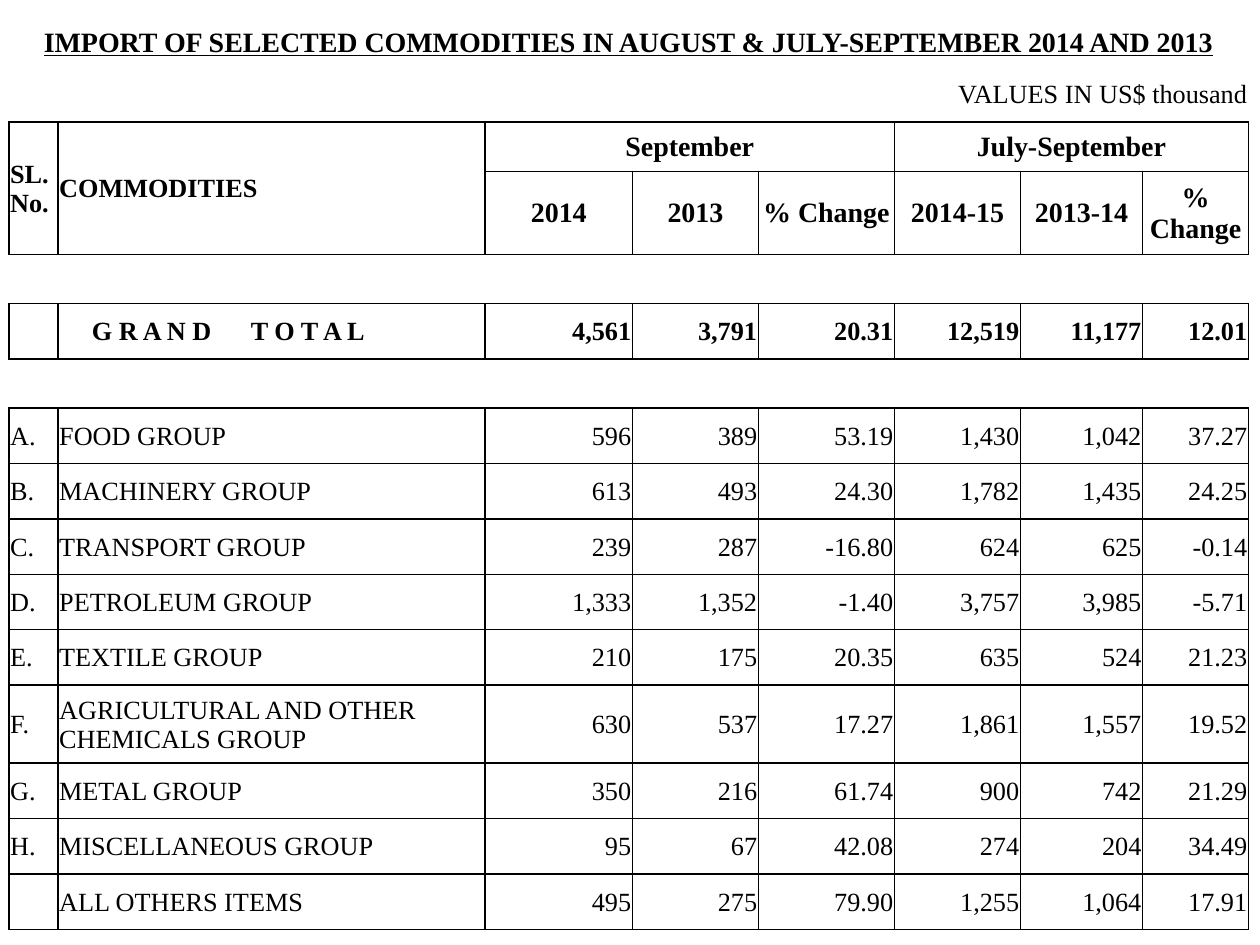
from lxml.etree import SubElement
from pptx import Presentation
from pptx.dml.color import RGBColor
from pptx.enum.text import MSO_ANCHOR as Anchor, PP_ALIGN as Align
from pptx.oxml.ns import qn
from pptx.util import Inches, Pt

BLACK = "000000"
TITLE, UNITS, HEAD, SUBHEAD, GAP_ABOVE, TOTAL, GAP_BELOW, FIRST_GROUP = range(8)
FIGURE_COLUMNS = (2, 3, 5, 6, 7, 8)  # 2013 covers columns 3 and 4

groups = [
    ("A.", "FOOD GROUP", "596", "389", "53.19", "1,430", "1,042", "37.27"),
    ("B.", "MACHINERY GROUP", "613", "493", "24.30", "1,782", "1,435", "24.25"),
    ("C.", "TRANSPORT GROUP", "239", "287", "-16.80", "624", "625", "-0.14"),
    ("D.", "PETROLEUM GROUP", "1,333", "1,352", "-1.40", "3,757", "3,985", "-5.71"),
    ("E.", "TEXTILE GROUP", "210", "175", "20.35", "635", "524", "21.23"),
    ("F.", "AGRICULTURAL AND OTHER CHEMICALS GROUP",
     "630", "537", "17.27", "1,861", "1,557", "19.52"),
    ("G.", "METAL GROUP", "350", "216", "61.74", "900", "742", "21.29"),
    ("H.", "MISCELLANEOUS GROUP", "95", "67", "42.08", "274", "204", "34.49"),
    ("", "ALL OTHERS ITEMS", "495", "275", "79.90", "1,255", "1,064", "17.91"),
]
column_widths = [0.39, 3.39, 1.17, 0.38, 0.62, 1.08, 1, 0.97, 0.84]
row_heights = [0.39, 0.44, 0.39, 0.66, 0.39, 0.44, 0.39]
row_heights += [0.62 if code == "F." else 0.44 for code, *_ in groups]

prs = Presentation()
prs.slide_width, prs.slide_height = Inches(10), Inches(7.5)
slide = prs.slides.add_slide(prs.slide_layouts[6])
imports = slide.shapes.add_table(
    len(row_heights), len(column_widths), Inches(0.07), Inches(0.14),
    Inches(sum(column_widths)), Inches(sum(row_heights))).table
imports.first_row = imports.horz_banding = False
for column, width in zip(imports.columns, column_widths):
    column.width = Inches(width)
for row, height in zip(imports.rows, row_heights):
    row.height = Inches(height)


def write(row, col, text, size=15, bold=False, underline=False,
          align=Align.LEFT, color=BLACK):
    paragraph = imports.cell(row, col).text_frame.paragraphs[0]
    paragraph.alignment = align
    run = paragraph.add_run()
    run.text = text
    font = run.font
    font.name, font.size, font.bold, font.underline = (
        "Times New Roman", Pt(size), bold, underline)
    font.color.rgb = RGBColor.from_string(color)
    return run


# Merged cells: title, units, two-row headings, periods, 2013 column
merges = [(TITLE, 0, TITLE, 8), (UNITS, 2, UNITS, 3), (UNITS, 4, UNITS, 8),
          (HEAD, 0, SUBHEAD, 0), (HEAD, 1, SUBHEAD, 1),
          (HEAD, 2, HEAD, 5), (HEAD, 6, HEAD, 8)]
merges += [(row, 3, row, 4) for row in range(SUBHEAD, len(row_heights))]
for top, left, bottom, right in merges:
    imports.cell(top, left).merge(imports.cell(bottom, right))

# Margins, rules and clear fill of every cell
ruled_edges = {TITLE: "", UNITS: "B", GAP_ABOVE: "TB", GAP_BELOW: "TB"}
for row in range(len(row_heights)):
    for col in range(len(column_widths)):
        cell = imports.cell(row, col)
        cell.margin_left = cell.margin_right = cell.margin_top = Inches(0.01)
        cell.margin_bottom = 0
        cell.vertical_anchor = Anchor.MIDDLE
        properties = cell._tc.get_or_add_tcPr()
        for edge in "LRTB":
            rule = SubElement(properties, qn(f"a:ln{edge}"), w=str(Pt(1)))
            if edge in ruled_edges.get(row, "LRTB"):
                paint = SubElement(rule, qn("a:solidFill"))
                SubElement(paint, qn("a:srgbClr"), val=BLACK)
            else:
                SubElement(rule, qn("a:noFill"))
        cell.fill.background()

# Title and headings
write(TITLE, 0, "IMPORT OF SELECTED COMMODITIES IN AUGUST & JULY-SEPTEMBER 2014 AND 2013",
      size=16, bold=True, underline=True, align=Align.CENTER)
write(UNITS, 4, "VALUES IN US$ thousand", align=Align.RIGHT)
write(HEAD, 0, "SL. No.", bold=True)
write(HEAD, 1, "COMMODITIES", bold=True)
for col, period in ((2, "September"), (6, "July-September")):
    write(HEAD, col, period, size=16, bold=True, align=Align.CENTER)
measures = ("2014", "2013", "% Change", "2014-15", "2013-14", "% Change")
for col, measure in zip(FIGURE_COLUMNS, measures):
    write(SUBHEAD, col, measure, size=16, bold=True, align=Align.CENTER)

# Grand total, its two words set apart by a widened space
imports.cell(TOTAL, 1).margin_left = Inches(0.27)
write(TOTAL, 1, "G R A N D", bold=True)
word_gap = write(TOTAL, 1, " ", bold=True)
word_gap.font._element.set("spc", "1875")
write(TOTAL, 1, "T O T A L", bold=True)
totals = ("4,561", "3,791", "20.31", "12,519", "11,177", "12.01")
for col, figure in zip(FIGURE_COLUMNS, totals):
    write(TOTAL, col, figure, bold=True, align=Align.RIGHT)

# Commodity groups
for row, (code, commodity, *figures) in enumerate(groups, FIRST_GROUP):
    if code:
        write(row, 0, code)
    write(row, 1, commodity)
    for col, figure in zip(FIGURE_COLUMNS, figures):
        write(row, col, figure, align=Align.RIGHT)

prs.save("out.pptx")
